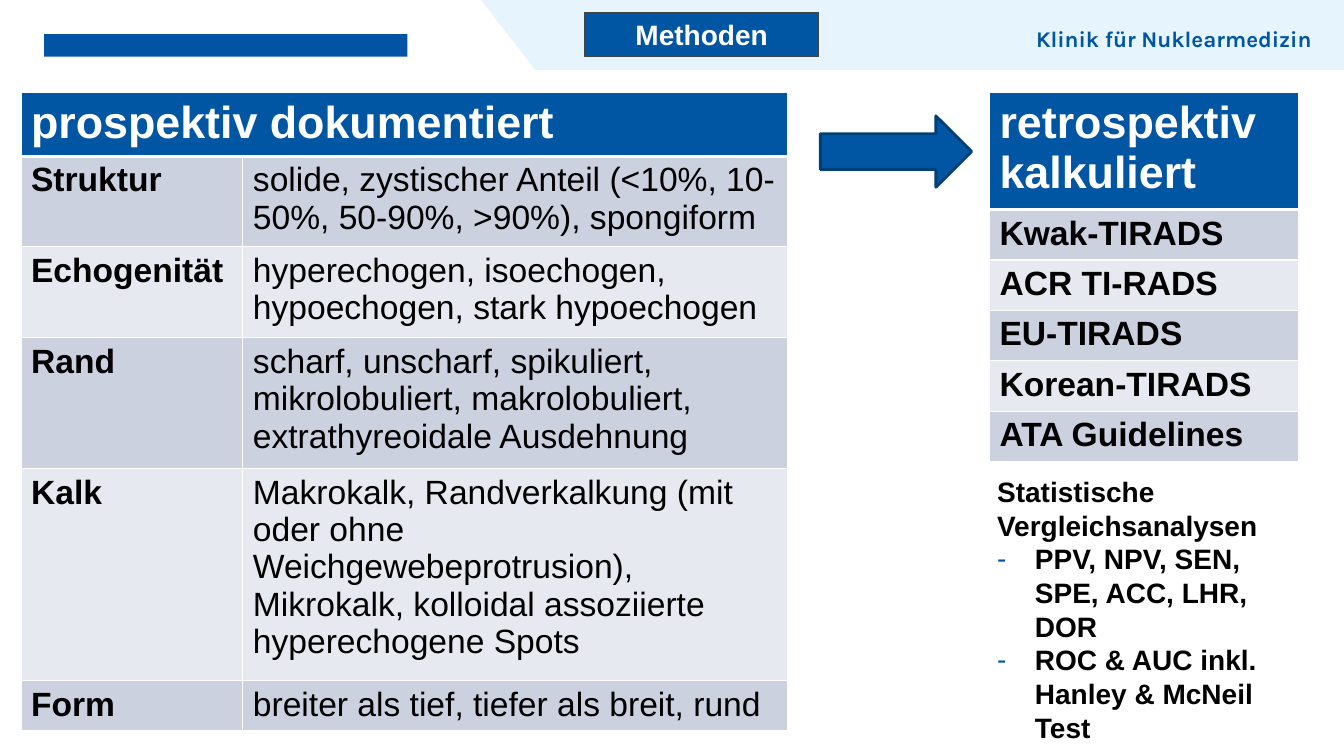
from pptx import Presentation
from pptx.dml.color import RGBColor
from pptx.enum.shapes import MSO_SHAPE
from pptx.enum.text import MSO_ANCHOR, MSO_AUTO_SIZE, PP_ALIGN
from pptx.oxml.ns import qn
from pptx.util import Pt
from lxml import etree

ARROW, RECTANGLE = MSO_SHAPE.RIGHT_ARROW, MSO_SHAPE.RECTANGLE
TOP, MIDDLE = MSO_ANCHOR.TOP, MSO_ANCHOR.MIDDLE
LEFT, CENTER, RIGHT = PP_ALIGN.LEFT, PP_ALIGN.CENTER, PP_ALIGN.RIGHT
NO_AUTOSIZE = MSO_AUTO_SIZE.NONE

BLUE, DARK_BLUE, PALE_BLUE, MARK_BLUE = "0056A2", "004078", "E5F4FD", "0054A3"
WHITE, BLACK, GRAY = "FFFFFF", "000000", "434342"
BANDS = ("CCD1E0", "E7E9F0")

DOCUMENTED = [
    ("Struktur", "solide, zystischer Anteil (<10%, 10-50%, 50-90%, >90%), spongiform"),
    ("Echogenität", "hyperechogen, isoechogen, hypoechogen, stark hypoechogen"),
    ("Rand", "scharf, unscharf, spikuliert, mikrolobuliert, makrolobuliert, "
             "extrathyreoidale Ausdehnung"),
    ("Kalk", "Makrokalk, Randverkalkung (mit oder ohne Weichgewebeprotrusion), "
             "Mikrokalk, kolloidal assoziierte hyperechogene Spots"),
    ("Form", "breiter als tief, tiefer als breit, rund"),
]
CALCULATED = [("Kwak-TIRADS",), ("ACR TI-RADS",), ("EU-TIRADS",),
              ("Korean-TIRADS",), ("ATA Guidelines",)]
ANALYSES = ["PPV, NPV, SEN, SPE, ACC, LHR, DOR",
            "ROC & AUC inkl. Hanley & McNeil Test"]


def color(value):
    return RGBColor.from_string(value)


def paint(shape, fill, line=None, width=0):
    shape.fill.solid()
    shape.fill.fore_color.rgb = color(fill)
    if line:
        shape.line.color.rgb = color(line)
        shape.line.width = Pt(width)
    else:
        shape.line.fill.background()


def place(shape, left, top, width, height):
    shape.left, shape.top = Pt(left), Pt(top)
    shape.width, shape.height = Pt(width), Pt(height)


def style_text(frame, size, ink, bold=True, align=LEFT, font="Arial"):
    for para in frame.paragraphs:
        para.alignment = align
        para.space_before = Pt(0)
        for span in para.runs:
            span.font.name = font
            span.font.size = Pt(size)
            span.font.bold = bold
            span.font.color.rgb = color(ink)


def set_frame(frame, anchor):
    frame.word_wrap = True
    frame.auto_size = NO_AUTOSIZE
    frame.vertical_anchor = anchor
    frame.margin_left = frame.margin_right = Pt(7.2)
    frame.margin_top = frame.margin_bottom = Pt(3.6)


def set_bullet(para, mark=None):
    properties = para._p.get_or_add_pPr()
    indent = Pt(27) if mark else 0
    properties.set("marL", str(indent))
    properties.set("indent", str(-indent))
    if not mark:
        etree.SubElement(properties, qn("a:buNone"))
        return
    tint = etree.SubElement(properties, qn("a:buClr"))
    etree.SubElement(tint, qn("a:srgbClr"), val=BLUE)
    etree.SubElement(properties, qn("a:buFont"), typeface="Arial")
    etree.SubElement(properties, qn("a:buChar"), char=mark)


def set_borders(cell, bottom):
    properties = cell._tc.get_or_add_tcPr()
    for side, width in (("L", 1), ("R", 1), ("T", 1), ("B", bottom)):
        line = etree.SubElement(properties, qn("a:ln" + side), w=str(Pt(width)))
        fill = etree.SubElement(line, qn("a:solidFill"))
        etree.SubElement(fill, qn("a:srgbClr"), val=WHITE)


def fill_cell(cell, text, fill, size, ink, bold, bottom=1):
    set_borders(cell, bottom)
    cell.fill.solid()
    cell.fill.fore_color.rgb = color(fill)
    cell.text_frame.text = text
    style_text(cell.text_frame, size, ink, bold)


def add_grid(page, left, heading, rows, widths, heights):
    frame = page.shapes.add_table(len(heights), len(widths), Pt(left), Pt(66),
                                  Pt(sum(widths)), Pt(sum(heights)))
    table = frame.table
    for column, width in zip(table.columns, widths):
        column.width = Pt(width)
    for row, height in zip(table.rows, heights):
        row.height = Pt(height)
    for column in range(len(widths)):
        fill_cell(table.cell(0, column), "" if column else heading,
                  BLUE, 32, WHITE, True, bottom=3)
    if len(widths) > 1:
        table.cell(0, 0).merge(table.cell(0, len(widths) - 1))
    for number, row in enumerate(rows):
        for column, text in enumerate(row):
            fill_cell(table.cell(number + 1, column), text, BANDS[number % 2],
                      24, BLACK, column == 0)


def add_preset(page, kind, bounds, fill, line=None, width=0):
    shape = page.shapes.add_shape(kind, *[Pt(length) for length in bounds])
    shape.shadow.inherit = False
    paint(shape, fill, line, width)


def add_header(page):
    builder = page.shapes.build_freeform(Pt(343.5), 0, scale=1.0)
    corners = [(382.5, 50), (960, 50), (960, 0)]
    builder.add_line_segments([(Pt(x), Pt(y)) for x, y in corners])
    band = builder.convert_to_shape()
    paint(band, PALE_BLUE)
    band.shadow.inherit = False
    page.shapes.title.element.addprevious(band.element)

    clinic = page.shapes.add_textbox(Pt(386.5), Pt(14.5), Pt(557.5), Pt(26.5))
    set_frame(clinic.text_frame, TOP)
    clinic.text_frame.text = "Klinik für Nuklearmedizin"
    style_text(clinic.text_frame, 16, BLUE, align=RIGHT, font="Karla")


def add_title(page):
    title = page.shapes.title
    place(title, 417.75, 9, 167, 31.5)
    paint(title, BLUE, GRAY, 0.75)
    set_frame(title.text_frame, MIDDLE)
    title.text_frame.text = "Methoden"
    style_text(title.text_frame, 20, WHITE, align=CENTER)


def add_analyses(page):
    body = page.placeholders[1]
    place(body, 705, 335.5, 221, 201)
    frame = body.text_frame
    set_frame(frame, TOP)
    frame.text = "Statistische Vergleichsanalysen"
    set_bullet(frame.paragraphs[0])
    for text in ANALYSES:
        para = frame.add_paragraph()
        para.text = text
        set_bullet(para, "-")
    style_text(frame, 20, BLACK)


def main():
    deck = Presentation()
    deck.slide_width, deck.slide_height = Pt(960), Pt(540)
    page = deck.slides.add_slide(deck.slide_layouts[1])
    add_header(page)
    add_preset(page, RECTANGLE, (31.5, 24.5, 259.5, 16), MARK_BLUE)
    add_title(page)
    add_grid(page, 15, "prospektiv dokumentiert", DOCUMENTED,
             [158.5, 389], [45.75, 64.5, 65, 93.5, 151.5, 36])
    add_grid(page, 706.75, "retrospektiv kalkuliert", CALCULATED,
             [220.75], [83.75] + [36] * len(CALCULATED))
    add_preset(page, ARROW, (586, 82.75, 108, 51), BLUE, DARK_BLUE, 2)
    add_analyses(page)
    deck.save("out.pptx")


if __name__ == "__main__":
    main()
